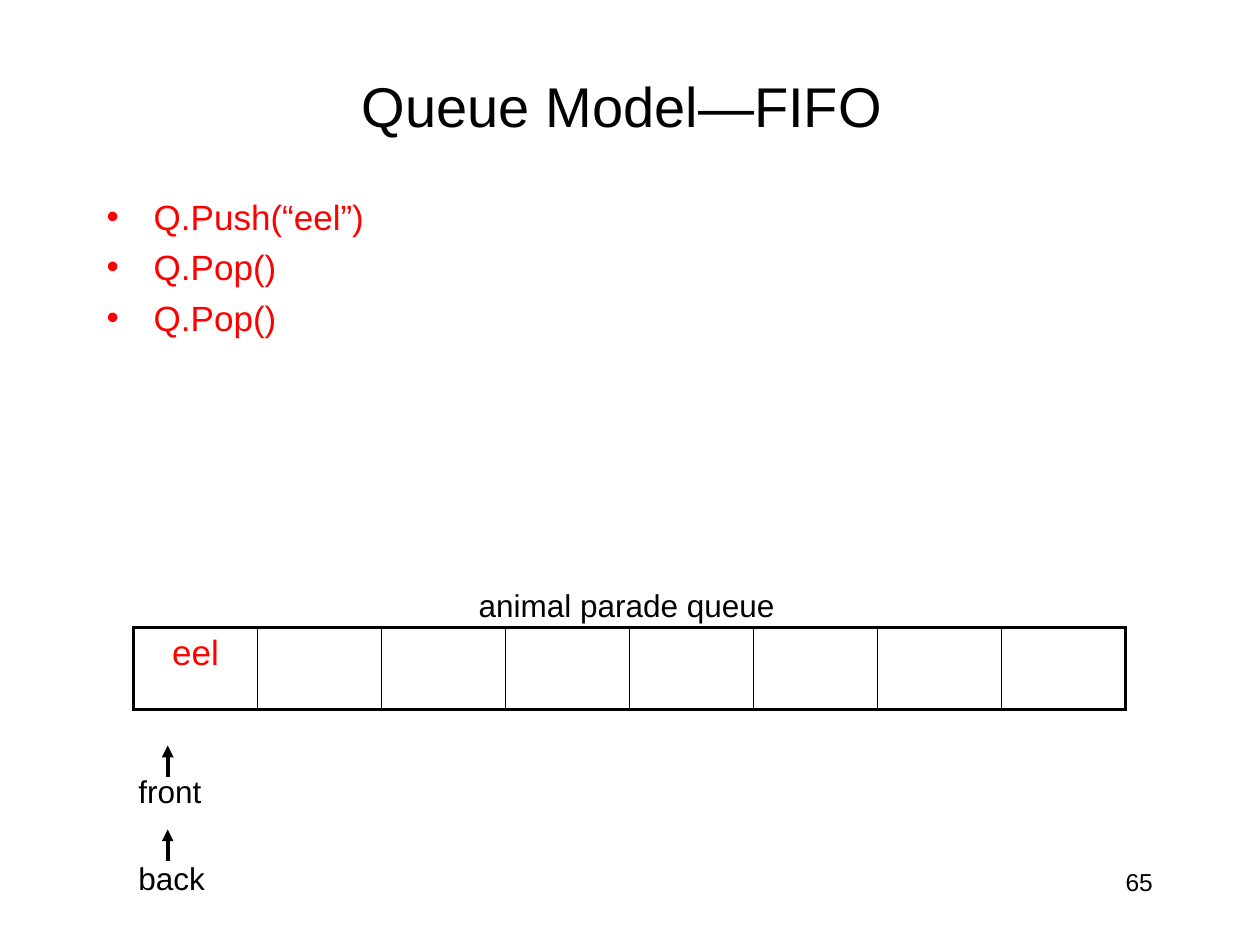
from lxml.etree import SubElement
from pptx import Presentation
from pptx.dml.color import RGBColor
from pptx.enum.shapes import MSO_CONNECTOR
from pptx.enum.text import MSO_ANCHOR, MSO_AUTO_SIZE, PP_ALIGN
from pptx.oxml.ns import qn
from pptx.util import Cm, Pt

BLACK = "000000"
RED = "FF0000"
CELL_COUNT = 8
THIN, THICK = 1, 2.25


def color(value):
    return RGBColor.from_string(value)


def add_run(paragraph, text, size, value=BLACK):
    run = paragraph.add_run()
    run.text = text
    run.font.name = "Arial"
    run.font.size = Pt(size)
    run.font.color.rgb = color(value)


def add_text(shapes, left, top, width, height, text, size,
             alignment=PP_ALIGN.LEFT, anchor=MSO_ANCHOR.TOP, wrap=True):
    shape = shapes.add_textbox(Cm(left), Cm(top), Cm(width), Cm(height))
    frame = shape.text_frame
    frame.word_wrap = wrap
    frame.vertical_anchor = anchor
    if not wrap:
        frame.auto_size = MSO_AUTO_SIZE.SHAPE_TO_FIT_TEXT
    paragraph = frame.paragraphs[0]
    paragraph.alignment = alignment
    add_run(paragraph, text, size)


def add_operations(shapes, left, top, width, height, operations):
    shape = shapes.add_textbox(Cm(left), Cm(top), Cm(width), Cm(height))
    frame = shape.text_frame
    frame.word_wrap = True
    for index, operation in enumerate(operations):
        paragraph = frame.add_paragraph() if index else frame.paragraphs[0]
        paragraph.space_before = Pt(5)
        properties = paragraph._p.get_or_add_pPr()
        properties.set("marL", str(Cm(0.95)))
        properties.set("indent", str(-Cm(0.95)))
        SubElement(properties, qn("a:buFont"), typeface="Arial")
        SubElement(properties, qn("a:buChar"), char="•")
        add_run(paragraph, operation, 20, RED)


def set_borders(cell, widths):
    properties = cell._tc.get_or_add_tcPr()
    for index, (side, width) in enumerate(widths.items()):
        line = properties.makeelement(qn(f"a:ln{side}"), {"w": str(Pt(width))})
        fill = SubElement(line, qn("a:solidFill"))
        SubElement(fill, qn("a:srgbClr"), val=BLACK)
        properties.insert(index, line)


def add_queue(shapes, left, top, width, height, items):
    add_text(shapes, left + 6.71, top - 0.97, 6.48, 1.02,
             "animal parade queue", 18, wrap=False)
    table = shapes.add_table(1, CELL_COUNT, Cm(left), Cm(top),
                             Cm(width), Cm(height)).table
    table.first_row = False
    table.horz_banding = False
    for index, cell in enumerate(table.rows[0].cells):
        table.columns[index].width = Cm(width / CELL_COUNT)
        cell.fill.background()
        set_borders(cell, {
            "L": THICK if index == 0 else THIN,
            "R": THICK if index == CELL_COUNT - 1 else THIN,
            "T": THICK,
            "B": THICK,
        })
        paragraph = cell.text_frame.paragraphs[0]
        paragraph.alignment = PP_ALIGN.CENTER
        paragraph.font.size = Pt(20)
        if index < len(items):
            add_run(paragraph, items[index], 20, RED)


def add_pointer(shapes, left, top, width, label_offset, label):
    group = shapes.add_group_shape()
    add_text(group.shapes, left, top + label_offset, width, 1.02,
             label, 18, wrap=False)
    x = Cm(left + 0.84)
    arrow = group.shapes.add_connector(
        MSO_CONNECTOR.STRAIGHT, x, Cm(top + 0.63), x, Cm(top))
    arrow.line.color.rgb = color(BLACK)
    arrow.line.width = Pt(THICK)
    SubElement(arrow.line._get_or_add_ln(), qn("a:tailEnd"), type="triangle")
    SubElement(arrow._element.spPr, qn("a:effectLst"))


def main():
    presentation = Presentation()
    presentation.slide_width = Cm(25.4)
    presentation.slide_height = Cm(19.05)
    slide = presentation.slides.add_slide(presentation.slide_layouts[6])
    shapes = slide.shapes
    add_text(shapes, 18.21, 17.35, 5.28, 1.27, "65", 14, PP_ALIGN.RIGHT)
    add_text(shapes, 1.9, 1.06, 21.6, 2.12, "Queue Model—FIFO ", 32,
             PP_ALIGN.CENTER, MSO_ANCHOR.MIDDLE)
    add_operations(shapes, 1.9, 3.81, 21.6, 6.35,
                   ["Q.Push(“eel”)", "Q.Pop()", "Q.Pop()"])
    add_queue(shapes, 2.69, 12.65, 20, 1.65, ["eel"])
    add_pointer(shapes, 2.54, 15.03, 1.78, 0.41, "front")
    add_pointer(shapes, 2.54, 16.72, 1.85, 0.48, "back")
    presentation.save("out.pptx")


if __name__ == "__main__":
    main()
